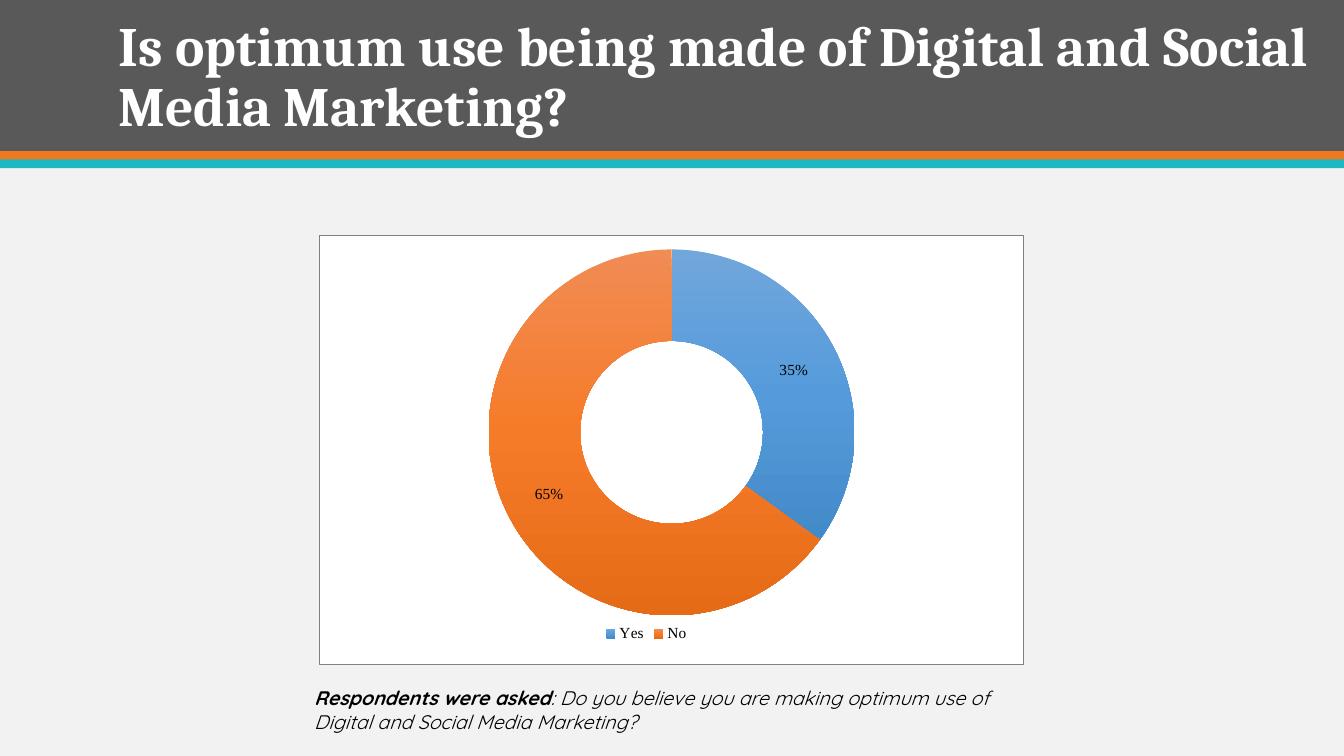
import pptx
import pptx.chart.data
import pptx.dml.color
import pptx.enum.chart
import pptx.enum.shapes
import pptx.enum.text
import pptx.oxml
import pptx.oxml.ns
import pptx.util
from pptx.util import Cm, Pt

RGBColor = pptx.dml.color.RGBColor
PALE = RGBColor(0xF2, 0xF2, 0xF2)
GRAY = RGBColor(0x59, 0x59, 0x59)
ORANGE = RGBColor(0xEF, 0x79, 0x20)
TEAL = RGBColor(0x1E, 0xB8, 0xC1)
WHITE = RGBColor(0xFF, 0xFF, 0xFF)
BLACK = RGBColor(0, 0, 0)
YES_STOPS = (RGBColor(0x71, 0xA6, 0xDB), RGBColor(0x55, 0x9B, 0xDB), RGBColor(0x43, 0x8A, 0xC9))
NO_STOPS = (RGBColor(0xF1, 0x8C, 0x55), RGBColor(0xF6, 0x7B, 0x28), RGBColor(0xE5, 0x6B, 0x17))
NAMESPACES = pptx.oxml.ns.nsdecls("c", "a")
qn = pptx.oxml.ns.qn


def set_font(font, name, size, color):
    font.name = name
    font.size = Pt(size)
    font.color.rgb = color


def place(element, index, settings):
    for old in element.findall(qn("c:layout")):
        element.remove(old)
    values = "".join(f'<c:{key} val="{value}"/>' for key, value in settings.items())
    layout = f"<c:layout {NAMESPACES}><c:manualLayout>{values}</c:manualLayout></c:layout>"
    element.insert(index, pptx.oxml.parse_xml(layout))


deck = pptx.Presentation()
deck.slide_width = Cm(33.87)
deck.slide_height = Cm(19.05)
page = deck.slides.add_slide(deck.slide_layouts[6])
page.background.fill.solid()
page.background.fill.fore_color.rgb = PALE

for top, height, color in ((0, 3.81, GRAY), (3.81, 0.22, ORANGE), (4.02, 0.22, TEAL)):
    band = page.shapes.add_shape(
        pptx.enum.shapes.MSO_SHAPE.RECTANGLE, 0, Cm(top), deck.slide_width, Cm(height))
    band.shadow.inherit = False
    band.fill.solid()
    band.fill.fore_color.rgb = color
    band.line.fill.background()

title = page.shapes.add_textbox(Cm(2.74), Cm(1.45), Cm(30.76), Cm(2.16))
title.text_frame.word_wrap = True
title.text_frame.vertical_anchor = pptx.enum.text.MSO_ANCHOR.BOTTOM
para = title.text_frame.paragraphs[0]
para.text = "Is optimum use being made of Digital and Social Media Marketing?"
para.line_spacing = 0.9
set_font(para.font, "Cambria", 39.6, WHITE)
para.font.bold = True

answers = pptx.chart.data.CategoryChartData(number_format="0%")
answers.categories = ["Yes", "No"]
answers.add_series("Series 1", (0.35, 0.65))
chart = page.shapes.add_chart(
    pptx.enum.chart.XL_CHART_TYPE.DOUGHNUT,
    Cm(8.05), Cm(5.92), Cm(17.75), Cm(10.82), answers).chart
set_font(chart.font, "Calibri", 10, BLACK)
chart.has_title = False
chart.has_legend = True
chart.legend.position = pptx.enum.chart.XL_LEGEND_POSITION.BOTTOM
chart.legend.include_in_layout = False
set_font(chart.legend.font, "Times New Roman", 11, BLACK)

plot = chart.plots[0]
plot.vary_by_categories = True
plot.has_data_labels = True
labels = plot.data_labels
labels.show_value = True
labels.show_percentage = False
labels.number_format = "0%"
labels.number_format_is_linked = False
set_font(labels.font, "Times New Roman", 11, BLACK)

for index, colors in enumerate((YES_STOPS, NO_STOPS)):
    point_format = plot.series[0].points[index].format
    point_format.line.fill.background()
    point_format.fill.gradient()
    point_format.fill.gradient_angle = 270
    stops = "".join(
        f'<a:gs pos="{position}"><a:srgbClr val="{color}"/></a:gs>'
        for position, color in zip((0, 50000, 100000), colors))
    stop_list = chart.element.findall(".//" + qn("a:gsLst"))[index]
    stop_list.getparent().replace(
        stop_list, pptx.oxml.parse_xml(f"<a:gsLst {NAMESPACES}>{stops}</a:gsLst>"))

chart.element.find(".//" + qn("c:holeSize")).set("val", "50")
place(chart.element.find(".//" + qn("c:plotArea")), 0, {
    "layoutTarget": "inner", "xMode": "edge", "yMode": "edge",
    "x": 0.24, "y": 0.03, "w": 0.52, "h": 0.86})
place(chart.element.find(".//" + qn("c:legend")), 1, {
    "xMode": "edge", "yMode": "edge", "x": 0.4, "y": 0.9})
frame = pptx.oxml.parse_xml(
    f'<c:spPr {NAMESPACES}><a:solidFill><a:srgbClr val="FFFFFF"/></a:solidFill>'
    '<a:ln w="3175"><a:solidFill><a:srgbClr val="808080"/></a:solidFill></a:ln></c:spPr>')
chart.element.find(qn("c:chart")).addnext(frame)

caption = page.shapes.add_textbox(Cm(7.67), Cm(17.17), Cm(18.52), Cm(1.45))
caption.text_frame.word_wrap = True
para = caption.text_frame.paragraphs[0]
set_font(para.font, "Quicksand", 14, BLACK)
para.font.italic = True
for words, bold in (
        ("Respondents were asked", True),
        (": Do you believe you are making optimum use of Digital and Social Media Marketing?", False)):
    span = para.add_run()
    span.text = words
    span.font.bold = bold

deck.save("out.pptx")
